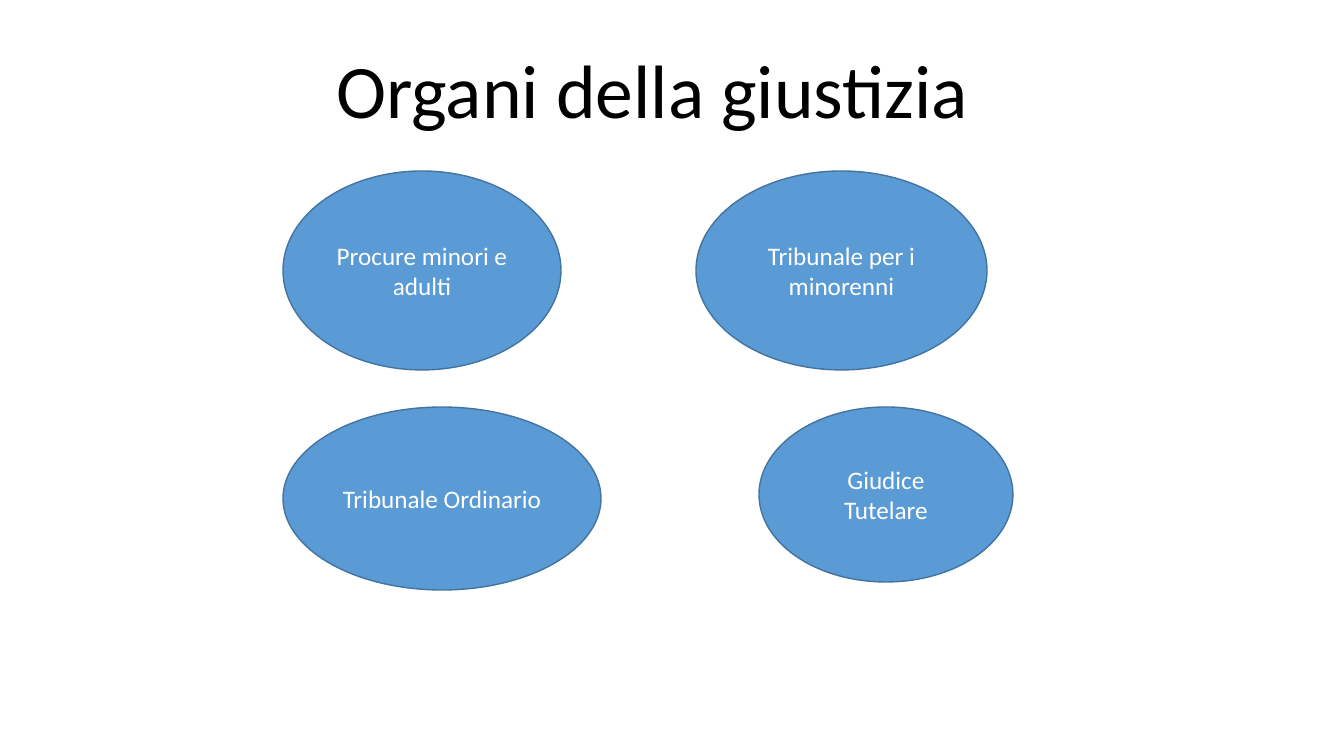
"""Build a slide showing four bodies of the justice system as ellipses."""
import pptx
import pptx.dml.color
import pptx.enum.shapes
import pptx.enum.text
import pptx.util

TITLE = "Organi della giustizia"
TITLE_BOX = (204, 60, 897, 80)
ROWS = [
    (171, [("Procure minori e adulti", 283, 278, 199),
           ("Tribunale per i minorenni", 696, 291, 199)]),
    (407, [("Tribunale Ordinario", 283, 318, 183),
           ("Giudice Tutelare", 759, 254, 175)]),
]
THEME = {
    "font": "Calibri", "title_size": 54, "body_size": 18, "line_width": 1,
    "title": "000000", "body": "FFFFFF", "fill": "5B9BD5", "line": "43739E",
}
SLIDE_SIZE = (1344, 756)
EMU_PER_PX = 914400 / 100.8


def px(length):
    """Turn pixels into EMU."""
    return pptx.util.Emu(round(length * EMU_PER_PX))


def color(name):
    """Return a theme colour."""
    return pptx.dml.color.RGBColor.from_string(THEME[name])


def write_text(shape, text, *, size, ink, anchor, line_spacing=None):
    """Write one centred, wrapped paragraph into a shape."""
    frame = shape.text_frame
    frame.word_wrap = True
    frame.vertical_anchor = anchor
    paragraph = frame.paragraphs[0]
    paragraph.alignment = pptx.enum.text.PP_ALIGN.CENTER
    paragraph.line_spacing = line_spacing
    run = paragraph.add_run()
    run.text = text
    run.font.name = THEME["font"]
    run.font.size = pptx.util.Pt(THEME[size])
    run.font.color.rgb = color(ink)


def add_body(slide, text, box):
    """Add one labelled ellipse."""
    ellipse = slide.shapes.add_shape(
        pptx.enum.shapes.MSO_SHAPE.OVAL, *map(px, box))
    ellipse.shadow.inherit = False
    ellipse.fill.solid()
    ellipse.fill.fore_color.rgb = color("fill")
    ellipse.line.color.rgb = color("line")
    ellipse.line.width = pptx.util.Pt(THEME["line_width"])
    write_text(ellipse, text, size="body_size", ink="body",
               anchor=pptx.enum.text.MSO_ANCHOR.MIDDLE)


def main():
    """Build and save the presentation."""
    presentation = pptx.Presentation()
    presentation.slide_width, presentation.slide_height = map(px, SLIDE_SIZE)
    slide = presentation.slides.add_slide(presentation.slide_layouts[6])
    title = slide.shapes.add_textbox(*map(px, TITLE_BOX))
    write_text(title, TITLE, size="title_size", ink="title",
               anchor=pptx.enum.text.MSO_ANCHOR.BOTTOM, line_spacing=0.9)
    for top, bodies in ROWS:
        for text, left, width, height in bodies:
            add_body(slide, text, (left, top, width, height))
    presentation.save("out.pptx")


if __name__ == "__main__":
    main()
